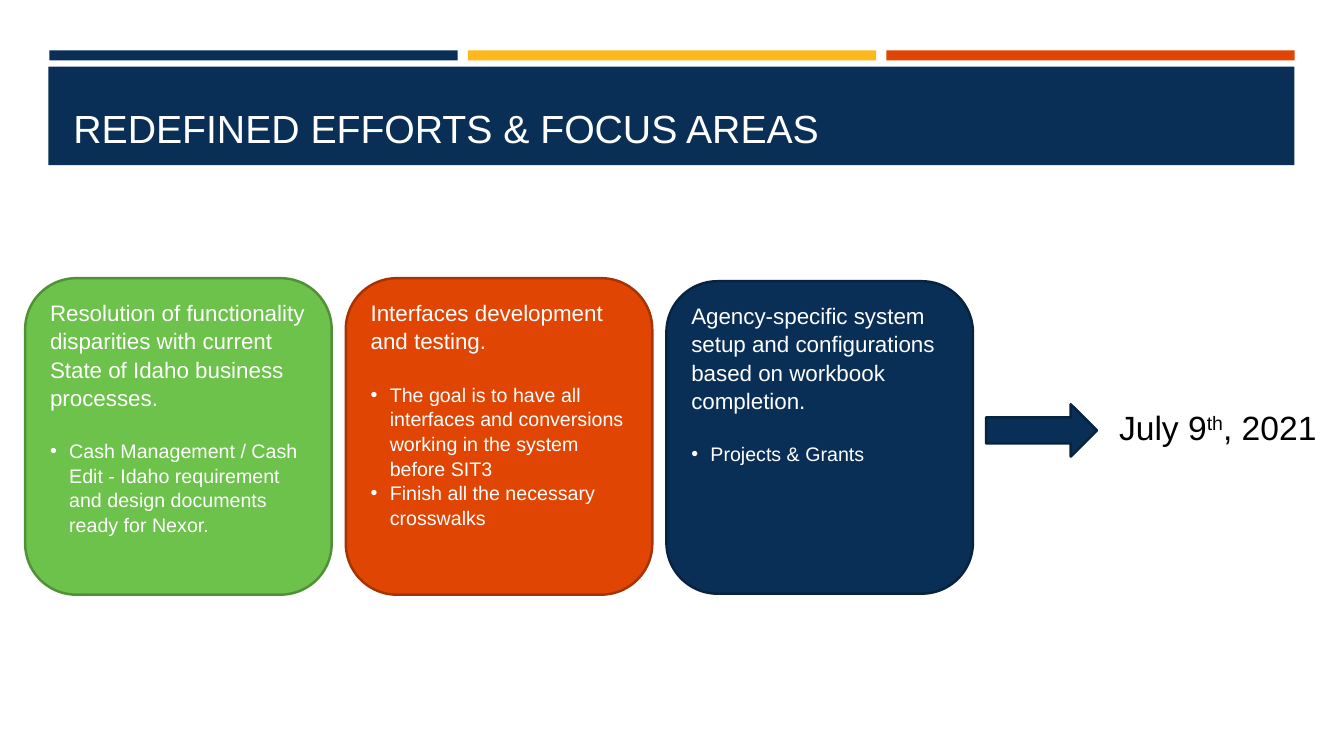
from lxml import etree
from pptx import Presentation
from pptx.dml.color import RGBColor
from pptx.enum.shapes import MSO_SHAPE as Shape
from pptx.enum.text import MSO_ANCHOR as Anchor, PP_ALIGN as Align
from pptx.oxml.ns import qn
from pptx.util import Inches, Pt

NAVY, ORANGE, GOLD, GREEN = "092F57", "E14504", "FFB81C", "6CC24A"
NAVY_EDGE, ORANGE_EDGE, GREEN_EDGE = "072340", "A63303", "509037"
WHITE, BLACK = "FFFFFF", "000000"

deck = Presentation()
deck.slide_width, deck.slide_height = Inches(13.33), Inches(7.5)
page = deck.slides.add_slide(deck.slide_layouts[6])


def add_block(kind, left, top, width, height, fill, edge=None):
    """Add a flat filled shape, outlined only when an edge colour is given."""
    block = page.shapes.add_shape(
        kind, Inches(left), Inches(top), Inches(width), Inches(height))
    block.shadow.inherit = False
    block.fill.solid()
    block.fill.fore_color.rgb = RGBColor.from_string(fill)
    if edge:
        block.line.color.rgb = RGBColor.from_string(edge)
        block.line.width = Pt(1.75)
    else:
        block.line.fill.background()
    return block


def add_span(para, text, size, color):
    span = para.add_run()
    span.text = text
    span.font.name = "Arial"
    span.font.size = Pt(size)
    span.font.color.rgb = RGBColor.from_string(color)
    return span


# Header: three stripes above the title band
stripe_left, stripe_width, stripe_pitch = 0.49, 4.05, 4.15
for column, color in enumerate([NAVY, GOLD, ORANGE]):
    add_block(Shape.RECTANGLE, stripe_left + column * stripe_pitch, 0.5,
              stripe_width, 0.1, color)
add_block(Shape.RECTANGLE, 0.48, 0.66, 12.36, 0.98, NAVY)

title = page.shapes.add_textbox(
    Inches(0.63), Inches(0.8), Inches(12.06), Inches(0.75)).text_frame
title.word_wrap = True
title.vertical_anchor = Anchor.BOTTOM
add_span(title.paragraphs[0], "REDEFINED EFFORTS & FOCUS AREAS", 28, WHITE)

# Focus areas: top, height, fill, edge, heading, bullets
focus_areas = [
    (2.76, 3.14, GREEN, GREEN_EDGE,
     "Resolution of functionality disparities with current State of Idaho "
     "business processes.",
     ["Cash Management / Cash Edit - Idaho requirement and design documents "
      "ready for Nexor."]),
    (2.76, 3.14, ORANGE, ORANGE_EDGE,
     "Interfaces development and testing.",
     ["The goal is to have all interfaces and conversions working in the "
      "system before SIT3",
      "Finish all the necessary crosswalks"]),
    (2.79, 3.1, NAVY, NAVY_EDGE,
     "Agency-specific system setup and configurations based on workbook "
     "completion.",
     ["Projects & Grants"]),
]
card_left, card_width, card_pitch = 0.25, 3.04, 3.18
bullet_indent = Inches(0.19)
for column, (top, height, fill, edge, heading, bullets) in enumerate(focus_areas):
    card = add_block(Shape.ROUNDED_RECTANGLE, card_left + column * card_pitch,
                     top, card_width, height, fill, edge)
    box = card.text_frame
    box.word_wrap = True
    box.vertical_anchor = Anchor.TOP
    add_span(box.paragraphs[0], heading, 16, WHITE)
    for row, text in enumerate(bullets):
        para = box.add_paragraph()
        add_span(para, text, 14, WHITE)
        para.space_before = Pt(0 if row else 19.3)
        props = para._p.get_or_add_pPr()
        props.set("marL", str(bullet_indent))
        props.set("indent", str(-bullet_indent))
        etree.SubElement(props, qn("a:buFont")).set("typeface", "Arial")
        etree.SubElement(props, qn("a:buChar")).set("char", "•")
    for para in box.paragraphs:
        para.alignment = Align.LEFT
        para.line_spacing = 1.05

# Target date
add_block(Shape.RIGHT_ARROW, 9.78, 4.01, 1.1, 0.52, NAVY, NAVY_EDGE)
date = page.shapes.add_textbox(
    Inches(11), Inches(3.99), Inches(2.32), Inches(0.5)).text_frame
date.word_wrap = True
for text, raised in [("July 9", False), ("th", True), (", 2021", False)]:
    span = add_span(date.paragraphs[0], text, 24, BLACK)
    if raised:
        span.font._element.set("baseline", "30000")

deck.save("out.pptx")
